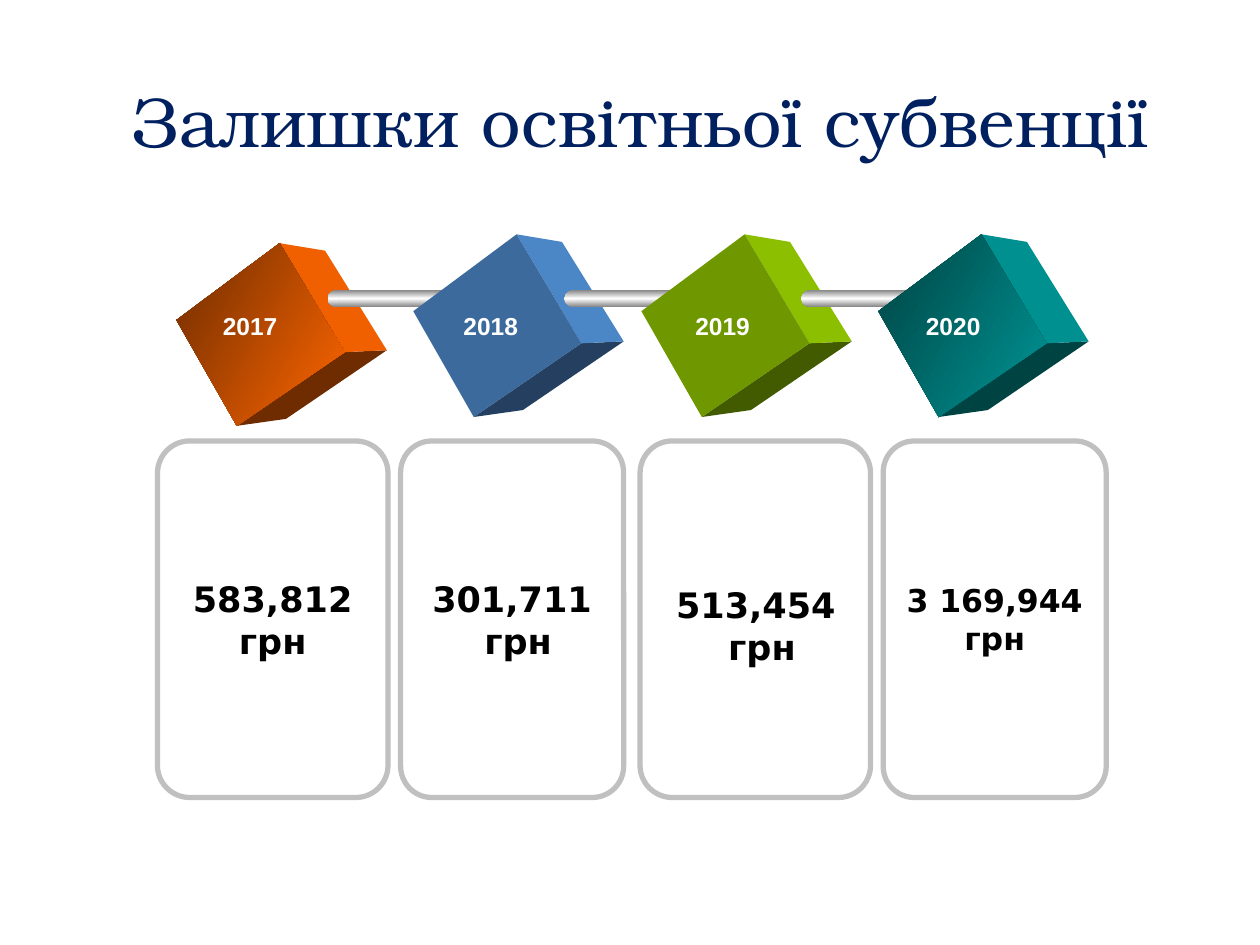
import copy

import pptx
import pptx.dml.color
import pptx.enum.shapes
import pptx.enum.text
import pptx.oxml.ns
import pptx.util
from lxml import etree

RGBColor = pptx.dml.color.RGBColor
Preset = pptx.enum.shapes.MSO_SHAPE
Align = pptx.enum.text.PP_ALIGN
Anchor = pptx.enum.text.MSO_ANCHOR
qn = pptx.oxml.ns.qn

WHITE = RGBColor(0xFF, 0xFF, 0xFF)
BLACK = RGBColor(0x00, 0x00, 0x00)
NAVY = RGBColor(0x00, 0x20, 0x60)
CARD_EDGE = RGBColor(0xC0, 0xC0, 0xC0)
ROD_EDGE = RGBColor(0x80, 0x80, 0x80)
ORANGE = RGBColor(0xFF, 0x66, 0x00)
ORANGE_SIDE = RGBColor(0xF0, 0x60, 0x00)
ORANGE_DARK = RGBColor(0x6E, 0x2C, 0x00)
BLUE = RGBColor(0x3D, 0x6A, 0x9C)
BLUE_SIDE = RGBColor(0x4B, 0x86, 0xC6)
BLUE_DARK = RGBColor(0x24, 0x3F, 0x5F)
GREEN = RGBColor(0x6F, 0x98, 0x00)
GREEN_SIDE = RGBColor(0x8C, 0xBF, 0x00)
GREEN_DARK = RGBColor(0x43, 0x5B, 0x00)
TEAL = RGBColor(0x00, 0x94, 0x94)
TEAL_SIDE = RGBColor(0x00, 0x90, 0x90)
TEAL_DARK = RGBColor(0x00, 0x43, 0x43)

# The slide is a grid of 100 columns by 75 rows of square cells.
CELL = pptx.util.Inches(0.1)
COLUMNS, ROWS = 100, 75

# Corners of a cube, in cells from its left and top edges.
FRONT = [(0, 6.1), (8.2, 0), (13.35, 8.65), (4.8, 14.5)]
SIDE = [(8.2, 0), (11.8, 0.6), (16.7, 8.5), (13.35, 8.65)]
BASE = [(4.8, 14.5), (13.35, 8.65), (16.7, 8.5), (8.7, 13.95)]

ROD_TOP, ROD_HEIGHT = 23, 1.4
CARD_TOP, CARD_HEIGHT = 35, 28.3
YEAR_TOP = 24.2

# Year, its column, cube column and row, front colours, side, base.
CUBES = [
    ("2017", 16.7, 14, 19.3, [ORANGE_DARK, ORANGE], ORANGE_SIDE, ORANGE_DARK),
    ("2018", 35.8, 32.8, 18.6, [BLUE], BLUE_SIDE, BLUE_DARK),
    ("2019", 54.2, 50.9, 18.6, [GREEN], GREEN_SIDE, GREEN_DARK),
    ("2020", 72.5, 69.7, 18.6, [TEAL_DARK, TEAL], TEAL_SIDE, TEAL_DARK),
]
# Left and right columns; each rod leaves one cube and enters the next.
RODS = [(26, 36.1), (44.8, 55), (63.6, 76.9)]
# Column, width, tinted, text lines, text size.
CARDS = [
    (31.8, 17.7, True, ["301,711", " грн"], 20),
    (12.5, 18.3, False, ["583,812 грн"], 20),
    (70.1, 17.7, True, ["3 169,944 грн"], 18),
    (50.8, 18.3, False, [], 20),
]


def cells(*counts):
    return [round(count * CELL) for count in counts]


def paint(shape, colours, angle=0):
    """Fill with one colour, or with an even gradient of several."""
    shape.shadow.inherit = False
    shape.line.fill.background()
    if len(colours) == 1:
        shape.fill.solid()
        shape.fill.fore_color.rgb = colours[0]
        return
    shape.fill.gradient()
    shape.fill.gradient_angle = angle
    stop_list = next(shape._element.spPr.iter(qn("a:gsLst")))
    while len(stop_list) < len(colours):
        stop_list.append(copy.deepcopy(stop_list[-1]))
    for index, (stop, colour) in enumerate(zip(shape.fill.gradient_stops, colours)):
        stop.color.rgb = colour
        stop.position = index / (len(colours) - 1)


def write(frame, lines, size, font_name, colour, bold=True, align=Align.CENTER):
    for index, line in enumerate(lines):
        paragraph = frame.add_paragraph() if index else frame.paragraphs[0]
        paragraph.alignment = align
        run = paragraph.add_run()
        run.text = line
        run.font.size = pptx.util.Pt(size)
        run.font.name = font_name
        run.font.bold = bold
        run.font.color.rgb = colour


def add_label(slide, box, wrap=False):
    frame = slide.shapes.add_textbox(*cells(*box)).text_frame
    frame.word_wrap = wrap
    return frame


def add_card(slide, left, width, tinted, lines, size):
    card = slide.shapes.add_shape(
        Preset.ROUNDED_RECTANGLE, *cells(left, CARD_TOP, width, CARD_HEIGHT))
    card.adjustments[0] = 0.14
    card.shadow.inherit = False
    card.line.color.rgb = CARD_EDGE
    card.line.width = pptx.util.Pt(3)
    if tinted:
        card.fill.solid()
        card.fill.fore_color.rgb = WHITE
        colour = next(card._element.spPr.iter(qn("a:srgbClr")))
        etree.SubElement(colour, qn("a:alpha"), val="31000")
    else:
        card.fill.background()
    card.text_frame.word_wrap = True
    card.text_frame.vertical_anchor = Anchor.MIDDLE
    write(card.text_frame, lines, size, "DejaVu Sans", BLACK)


def add_rod(slide, left, right):
    """A metal bar with a rounded cap at each end."""
    cap = 1.7
    parts = [
        (Preset.OVAL, left, cap),
        (Preset.RECTANGLE, left + cap / 2, right - left - cap),
        (Preset.OVAL, right - cap, cap),
    ]
    for preset, start, width in parts:
        part = slide.shapes.add_shape(
            preset, *cells(start, ROD_TOP, width, ROD_HEIGHT))
        paint(part, [ROD_EDGE, WHITE, ROD_EDGE], 90)


def add_cube(slide, left, top, front, side, base):
    for corners, colours in ((BASE, [base]), (SIDE, [side]), (FRONT, front)):
        points = [cells(left + x, top + y) for x, y in corners]
        builder = slide.shapes.build_freeform(*points[0])
        builder.add_line_segments(points[1:])
        paint(builder.convert_to_shape(), colours, 330)


def main():
    deck = pptx.Presentation()
    deck.slide_width, deck.slide_height = cells(COLUMNS, ROWS)
    slide = deck.slides.add_slide(deck.slide_layouts[6])

    for card in CARDS:
        add_card(slide, *card)

    for index, (_, _, *cube) in enumerate(CUBES):
        if index:
            add_rod(slide, *RODS[index - 1])
        add_cube(slide, *cube)

    for year, left, *_ in CUBES:
        label = add_label(slide, (left, YEAR_TOP, 6.4, 3.4))
        write(label, [year], 14, "Arial", WHITE, align=Align.LEFT)

    title = add_label(slide, (9.4, 3.6, 82.8, 10.2), wrap=True)
    title.margin_top = title.margin_bottom = CELL
    title.vertical_anchor = Anchor.BOTTOM
    write(title, ["Залишки освітньої субвенції"], 40, "TeX Gyre Bonum", NAVY, bold=False)

    amount_2019 = add_label(slide, (52.5, 45.8, 15, 7.7))
    write(amount_2019, ["513,454", " грн"], 20, "DejaVu Sans", BLACK)

    deck.save("out.pptx")


if __name__ == "__main__":
    main()
